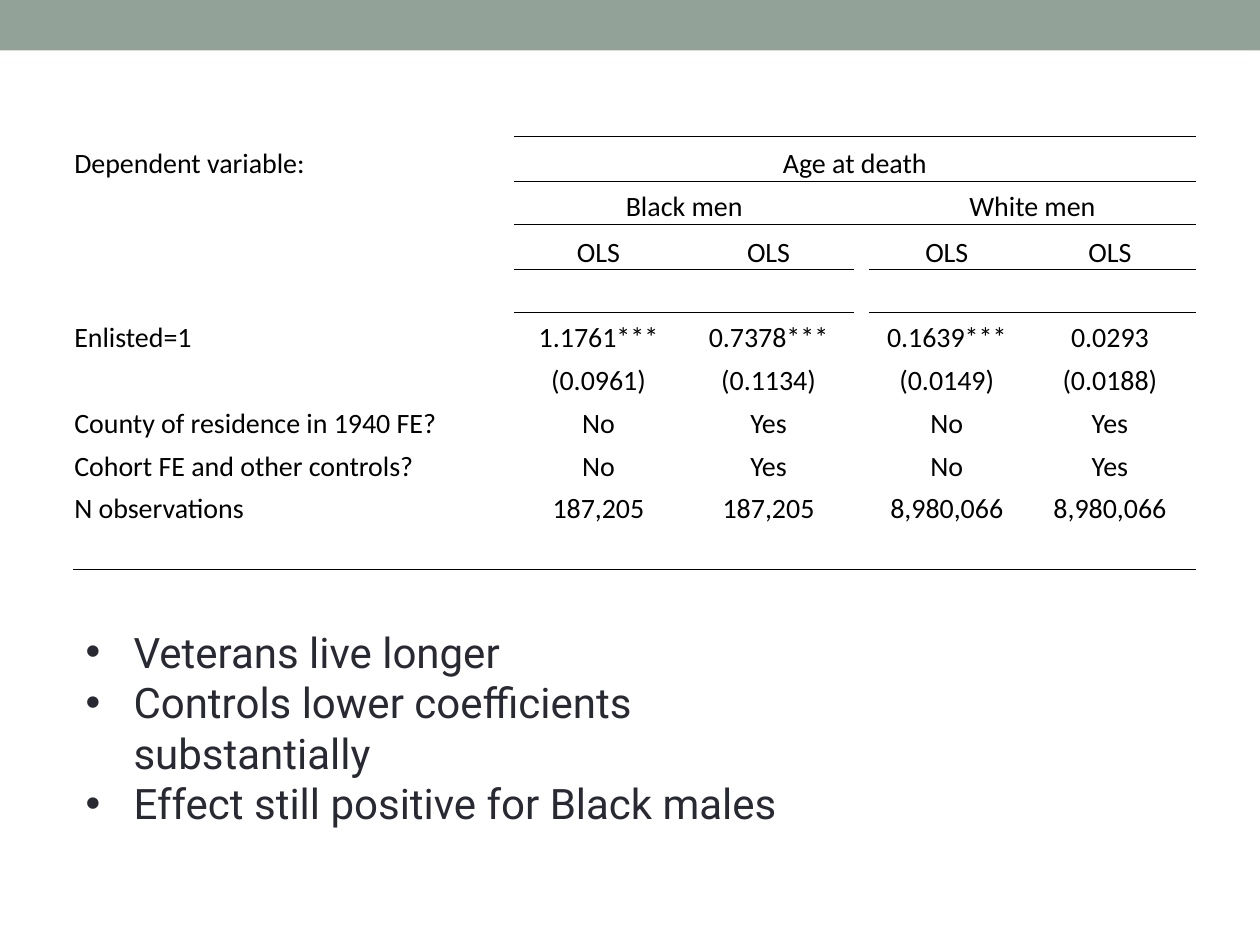
from lxml.etree import SubElement
from pptx import Presentation
from pptx.dml.color import RGBColor
from pptx.enum.shapes import MSO_SHAPE
from pptx.enum.text import MSO_ANCHOR, MSO_AUTO_SIZE, PP_ALIGN
from pptx.oxml.ns import qn
from pptx.util import Inches, Pt

SAGE = RGBColor(0x93, 0xA2, 0x99)
INK = RGBColor(0x29, 0x29, 0x34)
BLACK = RGBColor(0, 0, 0)
NO_STYLE_NO_GRID = "{2D5ABB26-0587-4C30-8999-92F81FD0307C}"

COLUMN_WIDTHS = [3.5, 1.34, 1.36, 0.12, 1.23, 1.36]
ROW_HEIGHTS = [0.36, 0.34, 0.36] + [0.34] * 7
# The fourth column is a narrow gap between the two groups of men.
ROWS = [
    ["Dependent variable:", "Age at death", "", "", "", ""],
    ["", "Black men", "", "", "White men", ""],
    ["", "OLS", "OLS", "", "OLS", "OLS"],
    [""] * 6,
    ["Enlisted=1", "1.1761***", "0.7378***", "", "0.1639***", "0.0293"],
    ["", "(0.0961)", "(0.1134)", "", "(0.0149)", "(0.0188)"],
    ["County of residence in 1940 FE?", "No", "Yes", "", "No", "Yes"],
    ["Cohort FE and other controls?", "No", "Yes", "", "No", "Yes"],
    ["N observations", "187,205", "187,205", "", "8,980,066", "8,980,066"],
    [""] * 6,
]
MERGES = [(0, 1, 5), (1, 1, 2), (1, 4, 5)]  # row, first column, last column
GROUPS = {1, 2, 4, 5}
# Columns ruled at each horizontal edge; edge n lies above row n.
RULES = {0: GROUPS | {3}, 1: GROUPS | {3}, 2: GROUPS, 3: GROUPS, 10: set(range(6))}

BULLETS = [
    "Veterans live longer",
    "Controls lower coefficients substantially",
    "Effect still positive for Black males",
]


def format_runs(paragraph, font_name, size, color):
    for run in paragraph.runs:
        run.font.name = font_name
        run.font.size = Pt(size)
        run.font.color.rgb = color


def add_border(cell, tag):
    line = SubElement(cell._tc.get_or_add_tcPr(), qn(tag), w=str(Pt(0.5)))
    fill = SubElement(line, qn("a:solidFill"))
    SubElement(fill, qn("a:srgbClr"), val=str(BLACK))


def add_band(slide, width):
    band = slide.shapes.add_shape(MSO_SHAPE.RECTANGLE, 0, 0, width, Inches(0.4))
    band.shadow.inherit = False
    band.fill.solid()
    band.fill.fore_color.rgb = SAGE
    band.line.fill.background()


def fill_cell(cell, text, row, column):
    cell.text_frame.text = text
    cell.vertical_anchor = MSO_ANCHOR.BOTTOM
    cell.margin_left = cell.margin_right = cell.margin_top = Inches(0.01)
    cell.margin_bottom = 0
    paragraph = cell.text_frame.paragraphs[0]
    paragraph.alignment = PP_ALIGN.CENTER if column else PP_ALIGN.LEFT
    format_runs(paragraph, "Calibri", 16, BLACK)
    for edge, tag in ((row, "a:lnT"), (row + 1, "a:lnB")):
        if column in RULES.get(edge, ()):
            add_border(cell, tag)
    cell.fill.background()


def add_results_table(slide):
    frame = slide.shapes.add_table(
        len(ROWS), len(COLUMN_WIDTHS), Inches(0.58), Inches(1.08),
        Inches(sum(COLUMN_WIDTHS)), Inches(sum(ROW_HEIGHTS)))
    table = frame.table
    table.first_row = table.horz_banding = False
    table._tbl.tblPr.find(qn("a:tableStyleId")).text = NO_STYLE_NO_GRID
    for column, width in zip(table.columns, COLUMN_WIDTHS):
        column.width = Inches(width)
    for row, height in zip(table.rows, ROW_HEIGHTS):
        row.height = Inches(height)
    for row, texts in enumerate(ROWS):
        for column, text in enumerate(texts):
            fill_cell(table.cell(row, column), text, row, column)
    for row, first, last in MERGES:
        table.cell(row, first).merge(table.cell(row, last))


def fill_findings(body):
    body.left, body.top = Inches(0.58), Inches(4.92)
    body.width, body.height = Inches(6.45), Inches(1.72)
    text_frame = body.text_frame
    text_frame.text = "\n".join(BULLETS)
    text_frame.word_wrap = True
    text_frame.auto_size = MSO_AUTO_SIZE.NONE
    for paragraph in text_frame.paragraphs:
        paragraph.space_before = Pt(0)
        format_runs(paragraph, "Roboto", 24, INK)
        properties = paragraph._p.get_or_add_pPr()
        properties.set("marL", str(Inches(0.38)))
        properties.set("indent", str(Inches(-0.38)))
        SubElement(properties, qn("a:buFont"), typeface="Arial")
        SubElement(properties, qn("a:buChar"), char="•")


def main():
    presentation = Presentation()
    presentation.slide_width, presentation.slide_height = Inches(10), Inches(7.5)
    slide = presentation.slides.add_slide(presentation.slide_layouts[1])
    title = slide.shapes.title._element
    title.getparent().remove(title)
    add_band(slide, presentation.slide_width)
    add_results_table(slide)
    fill_findings(slide.placeholders[1])
    presentation.save("out.pptx")


if __name__ == "__main__":
    main()
